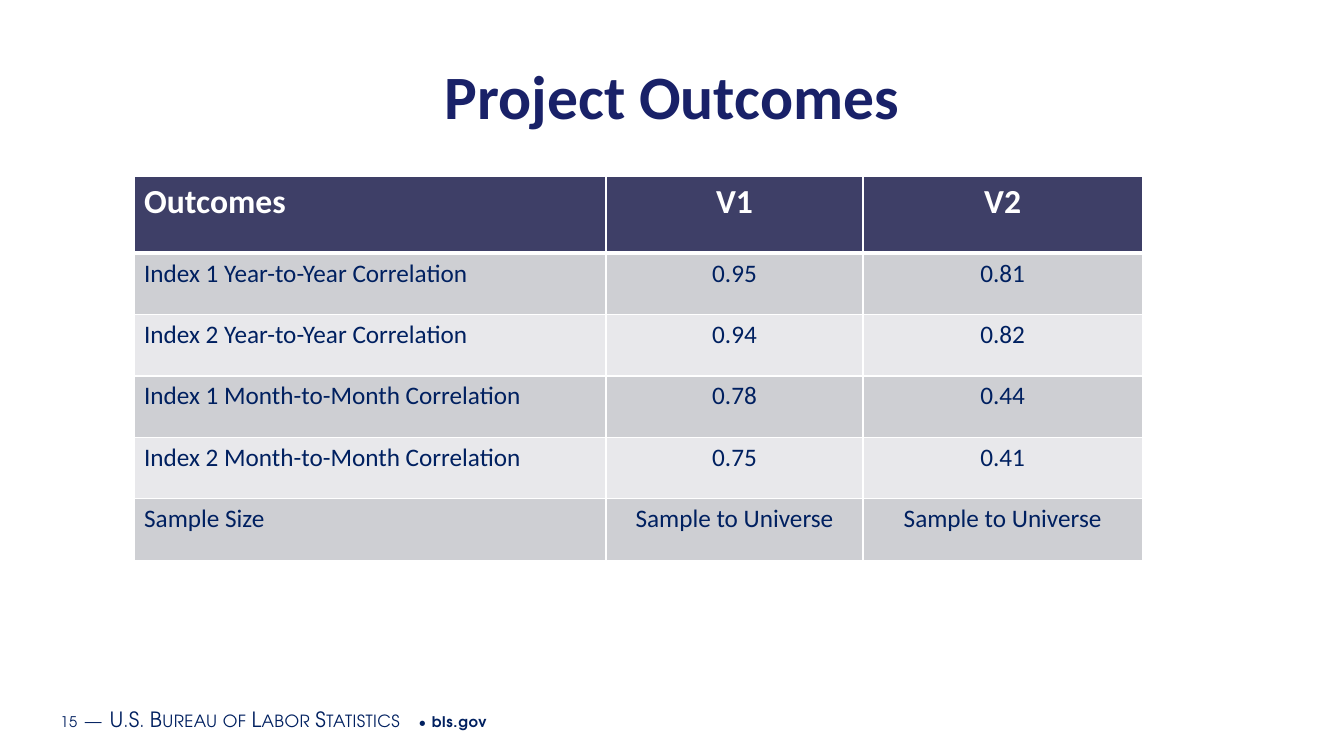
from lxml import etree
from pptx import Presentation
from pptx.dml.color import RGBColor
from pptx.enum.text import MSO_ANCHOR, PP_ALIGN
from pptx.oxml.ns import qn
from pptx.util import Inches, Pt

LEFT, CENTER = PP_ALIGN.LEFT, PP_ALIGN.CENTER
MIDDLE = MSO_ANCHOR.MIDDLE

WHITE, NAVY, TITLE_BLUE = "FFFFFF", "002060", "192168"
HEADER_FILL, BAND_FILLS = "3E3F67", ("CECFD3", "E8E8EB")
COLUMN_WIDTHS = (4.68, 2.55, 2.77)
HEADER_HEIGHT, ROW_HEIGHT = 0.76, 0.61

OUTCOMES = (
    ("Outcomes", "V1", "V2"),
    ("Index 1 Year-to-Year Correlation", "0.95", "0.81"),
    ("Index 2 Year-to-Year Correlation", "0.94", "0.82"),
    ("Index 1 Month-to-Month Correlation", "0.78", "0.44"),
    ("Index 2 Month-to-Month Correlation", "0.75", "0.41"),
    ("Sample Size", "Sample to Universe", "Sample to Universe"),
)

PLAIN = {"size": Pt(10.5), "bold": False}
GAP = {"size": Pt(16), "bold": False}
SMALL_CAPS = {"size": Pt(15), "bold": False}
FOOTER_SPANS = (
    ("15", PLAIN, {"spc": "50"}),
    (" ", GAP, {"spc": "50"}),
    ("—", SMALL_CAPS, {"spc": "30", "cap": "small"}),
    (" ", GAP, {"spc": "50"}),
    ("U.S. Bureau of Labor Statistics", SMALL_CAPS, {"spc": "30", "cap": "small"}),
    (" • ", PLAIN, {"spc": "50"}),
    ("bls.gov", {"size": Pt(10.5), "bold": True}, {"spc": "50"}),
)


def color(value):
    """Return the colour for a hex string."""
    return RGBColor.from_string(value)


def add_span(para, text, font_name, hex_color, formats, extras=None):
    """Add a formatted run to a paragraph."""
    span = para.add_run()
    span.text = text
    span.font.name = font_name
    span.font.color.rgb = color(hex_color)
    for name, value in formats.items():
        setattr(span.font, name, value)
    for name, value in (extras or {}).items():
        span.font._element.set(name, value)


def add_text_box(page, left, top, width, height, margins):
    """Add a wrapped, vertically centred text box and return its paragraph."""
    box = page.shapes.add_textbox(*map(Inches, (left, top, width, height)))
    frame = box.text_frame
    frame.word_wrap = True
    frame.vertical_anchor = MIDDLE
    for name, value in margins.items():
        setattr(frame, name, Inches(value))
    return frame.paragraphs[0]


def add_borders(cell, widths):
    """Draw white borders on a cell, with widths in points by side."""
    properties = cell._tc.get_or_add_tcPr()
    for side, width in widths.items():
        line = etree.SubElement(properties, qn(f"a:ln{side}"), w=str(Pt(width)))
        fill = etree.SubElement(line, qn("a:solidFill"))
        etree.SubElement(fill, qn("a:srgbClr"), val=WHITE)


def fill_cell(cell, text, row, column):
    """Write and style one cell of the outcomes table."""
    is_header = row == 0
    add_borders(cell, {"L": 1, "R": 1, "T": 3 if row == 1 else 1, "B": 3 if is_header else 1})
    cell.fill.solid()
    cell.fill.fore_color.rgb = color(HEADER_FILL if is_header else BAND_FILLS[(row - 1) % 2])
    para = cell.text_frame.paragraphs[0]
    para.alignment = CENTER if column else LEFT
    add_span(para, text, "Calibri", WHITE if is_header else NAVY,
             {"size": Pt(24 if is_header else 18), "bold": is_header})


def add_outcomes_table(page, left, top):
    """Add the outcomes table with a header and banded rows."""
    heights = [HEADER_HEIGHT] + [ROW_HEIGHT] * (len(OUTCOMES) - 1)
    size = (sum(COLUMN_WIDTHS), sum(heights))
    table = page.shapes.add_table(len(heights), len(COLUMN_WIDTHS),
                                  *map(Inches, (left, top, *size))).table
    for column, width in zip(table.columns, COLUMN_WIDTHS):
        column.width = Inches(width)
    for row, height in zip(table.rows, heights):
        row.height = Inches(height)
    for row, texts in enumerate(OUTCOMES):
        for column, text in enumerate(texts):
            fill_cell(table.cell(row, column), text, row, column)


def main():
    """Build the project outcomes slide."""
    deck = Presentation()
    deck.slide_width, deck.slide_height = Inches(13.33), Inches(7.5)
    page = deck.slides.add_slide(deck.slide_layouts[6])

    footer = add_text_box(page, 0.53, 6.93, 8.47, 0.4, {
        "margin_left": 0.07, "margin_right": 0.07, "margin_top": 0.04, "margin_bottom": 0.04})
    for text, formats, extras in FOOTER_SPANS:
        add_span(footer, text, "TeX Gyre Adventor", NAVY, formats, extras)

    title = add_text_box(page, 0.54, 0.5, 12.25, 0.88, {})
    title.alignment = CENTER
    add_span(title, "Project Outcomes", "Calibri", TITLE_BLUE, {"size": Pt(44), "bold": True})

    add_outcomes_table(page, 1.33, 1.75)
    deck.save("out.pptx")


if __name__ == "__main__":
    main()
